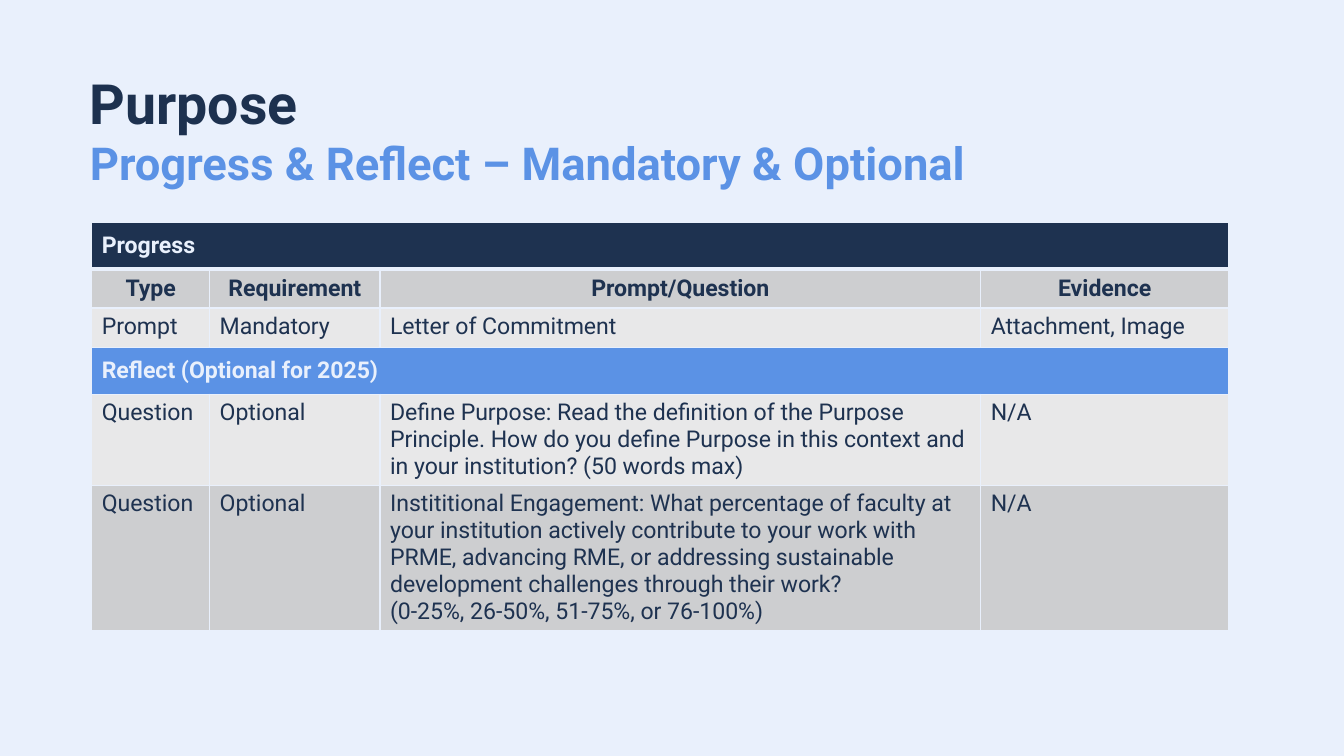
from lxml import etree
from pptx import Presentation
from pptx import util as u
from pptx.dml.color import RGBColor
from pptx.enum import text
from pptx.oxml.ns import qn

# Content
TITLE = "Purpose"
SUBTITLE = "Progress & Reflect – Mandatory & Optional"
# Each row: kind, fill colour, cell texts
ROWS = [
    ("band", "navy", ["Progress"]),
    ("heading", "grey", ["Type", "Requirement", "Prompt/Question", "Evidence"]),
    ("body", "light", ["Prompt", "Mandatory", "Letter of Commitment", "Attachment, Image"]),
    ("band", "blue", ["Reflect (Optional for 2025)"]),
    ("body", "light", [
        "Question", "Optional",
        "Define Purpose: Read the definition of the Purpose Principle. How do you define "
        "Purpose in this context and in your institution? (50 words max)",
        "N/A"]),
    ("body", "grey", [
        "Question", "Optional",
        "Instititional Engagement: What percentage of faculty at your institution actively "
        "contribute to your work with PRME, advancing RME, or addressing sustainable "
        "development challenges through their work?\n(0-25%, 26-50%, 51-75%, or 76-100%)",
        "N/A"]),
]
COLORS = {"pale": "E9F0FC", "navy": "1E3250", "title": "1D314F",
          "blue": "5B92E5", "grey": "CDCED0", "light": "E8E8E9"}
FONT = "Roboto"
COLUMN_WIDTHS = [84.25, 121.7, 429.1, 177.1]
ROW_HEIGHTS = [33.5, 28, 28, 33.5, 65.1, 103.7]
TABLE_LEFT, TABLE_TOP = 65.5, 158.6


def color(name):
    return RGBColor.from_string(COLORS[name])


def style(font, size, color_name, bold):
    font.name, font.size, font.bold = FONT, u.Pt(size), bold
    font.color.rgb = color(color_name)


def add_borders(cell, widths):
    """Draw the left, right, top and bottom borders, widths in points."""
    properties = cell._tc.get_or_add_tcPr()
    for side, width in zip("LRTB", widths):
        line = etree.SubElement(properties, qn(f"a:ln{side}"), w=str(u.Pt(width)))
        fill = etree.SubElement(line, qn("a:solidFill"))
        etree.SubElement(fill, qn("a:srgbClr"), val=COLORS["pale"])


def add_title(slide):
    box = slide.shapes.add_textbox(u.Pt(54.7), u.Pt(36), u.Pt(833.8), u.Pt(100))
    frame = box.text_frame
    frame.word_wrap = True
    frame.margin_left = frame.margin_right = frame.margin_bottom = u.Pt(9.4)
    frame.margin_top = u.Pt(13.3)
    frame.text = f"{TITLE}\v{SUBTITLE}"
    runs = frame.paragraphs[0].runs
    style(runs[0].font, 39.6, "title", True)
    style(runs[1].font, 32.4, "blue", True)


def add_table(slide):
    table = slide.shapes.add_table(
        len(ROWS), len(COLUMN_WIDTHS), u.Pt(TABLE_LEFT), u.Pt(TABLE_TOP),
        u.Pt(sum(COLUMN_WIDTHS)), u.Pt(sum(ROW_HEIGHTS))).table
    table.first_row = table.horz_banding = False
    for column, width in zip(table.columns, COLUMN_WIDTHS):
        column.width = u.Pt(width)
    for row, height in zip(table.rows, ROW_HEIGHTS):
        row.height = u.Pt(height)

    for index, (kind, fill, texts) in enumerate(ROWS):
        cells = list(table.rows[index].cells)
        # The first band is set off by a thicker rule
        widths = (1, 1, 3 if index == 1 else 1, 3 if index == 0 else 1)
        for cell in cells:
            add_borders(cell, widths)
            cell.fill.solid()
            cell.fill.fore_color.rgb = color(fill)
        if kind == "band":
            cells[0].merge(cells[-1])
        for cell, words in zip(cells, texts):
            cell.text_frame.text = words
            if kind != "body":
                cell.vertical_anchor = text.MSO_ANCHOR.MIDDLE
            for paragraph in cell.text_frame.paragraphs:
                if kind == "heading":
                    paragraph.alignment = text.PP_ALIGN.CENTER
                for run in paragraph.runs:
                    style(run.font, 16.5, "pale" if kind == "band" else "navy", kind != "body")


def main():
    presentation = Presentation()
    presentation.slide_width, presentation.slide_height = u.Pt(960), u.Pt(540)
    slide = presentation.slides.add_slide(presentation.slide_layouts[6])
    slide.background.fill.solid()
    slide.background.fill.fore_color.rgb = color("pale")
    add_table(slide)
    add_title(slide)
    presentation.save("out.pptx")


if __name__ == "__main__":
    main()
